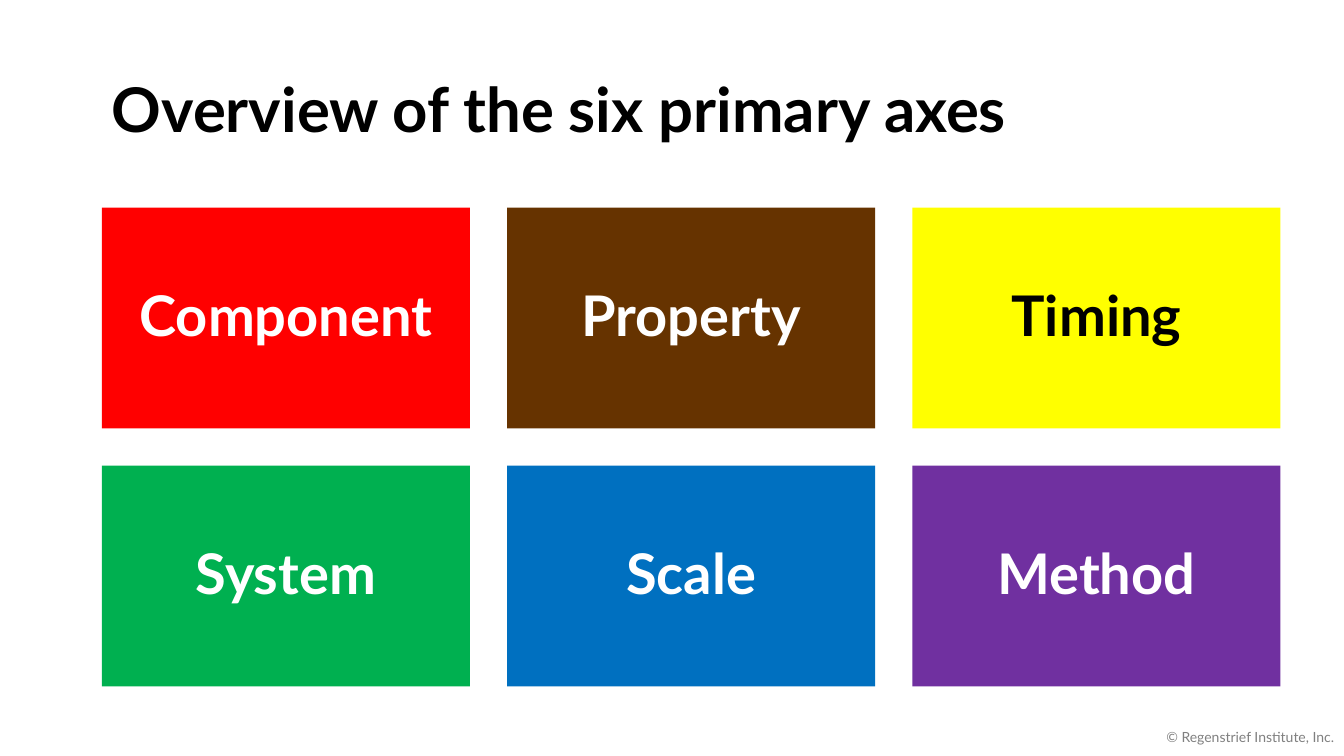
from pptx import Presentation
from pptx.dml.color import RGBColor
from pptx.enum.shapes import MSO_SHAPE
from pptx.enum.text import MSO_ANCHOR, PP_ALIGN
from pptx.util import Inches, Pt

RECT = MSO_SHAPE.RECTANGLE
MIDDLE = MSO_ANCHOR.MIDDLE
LEFT, CENTER, RIGHT = PP_ALIGN.LEFT, PP_ALIGN.CENTER, PP_ALIGN.RIGHT

COLORS = {
    "black": "000000",
    "white": "FFFFFF",
    "gray": "808080",
    "red": "FF0000",
    "brown": "663300",
    "yellow": "FFFF00",
    "green": "00B050",
    "blue": "0070C0",
    "purple": "7030A0",
}


def color(name):
    return RGBColor.from_string(COLORS[name])


def write(shape, text, size, ink, align, bold=True):
    frame = shape.text_frame
    frame.word_wrap = True
    frame.vertical_anchor = MIDDLE
    frame.text = text
    para = frame.paragraphs[0]
    para.alignment = align
    para.line_spacing = 0.9 if bold else 1.0
    font = para.runs[0].font
    font.name = "Lato"
    font.size = Pt(size)
    font.bold = bold
    font.color.rgb = color(ink)


prs = Presentation()
prs.slide_width = Inches(13.33)
prs.slide_height = Inches(7.5)
slide = prs.slides.add_slide(prs.slide_layouts[6])
shapes = slide.shapes

# Title
title = shapes.add_textbox(Inches(1.01), Inches(0.39), Inches(11.5), Inches(1.45))
write(title, "Overview of the six primary axes", 44, "black", LEFT)

# Grid of axes, three to a row
axes = [
    ("Component", "red", "white"),
    ("Property", "brown", "white"),
    ("Timing", "yellow", "black"),
    ("System", "green", "white"),
    ("Scale", "blue", "white"),
    ("Method", "purple", "white"),
]
wide, high, gap = 3.65, 2.19, 0.37
for i, (name, fill, ink) in enumerate(axes):
    row, col = divmod(i, 3)
    left = 1.01 + col * (wide + gap)
    top = 2.06 + row * (high + gap)
    tile = shapes.add_shape(RECT, Inches(left), Inches(top), Inches(wide), Inches(high))
    tile.shadow.inherit = False
    tile.fill.solid()
    tile.fill.fore_color.rgb = color(fill)
    tile.line.fill.background()
    write(tile, name, 40, ink, CENTER)
    frame = tile.text_frame
    frame.margin_left = frame.margin_right = Inches(0.19)
    frame.margin_top = frame.margin_bottom = Inches(0.19)

# Copyright line
footer = shapes.add_textbox(Inches(10.33), Inches(7.11), Inches(3), Inches(0.4))
write(footer, "© Regenstrief Institute, Inc.", 10, "gray", RIGHT, bold=False)

prs.save("out.pptx")
